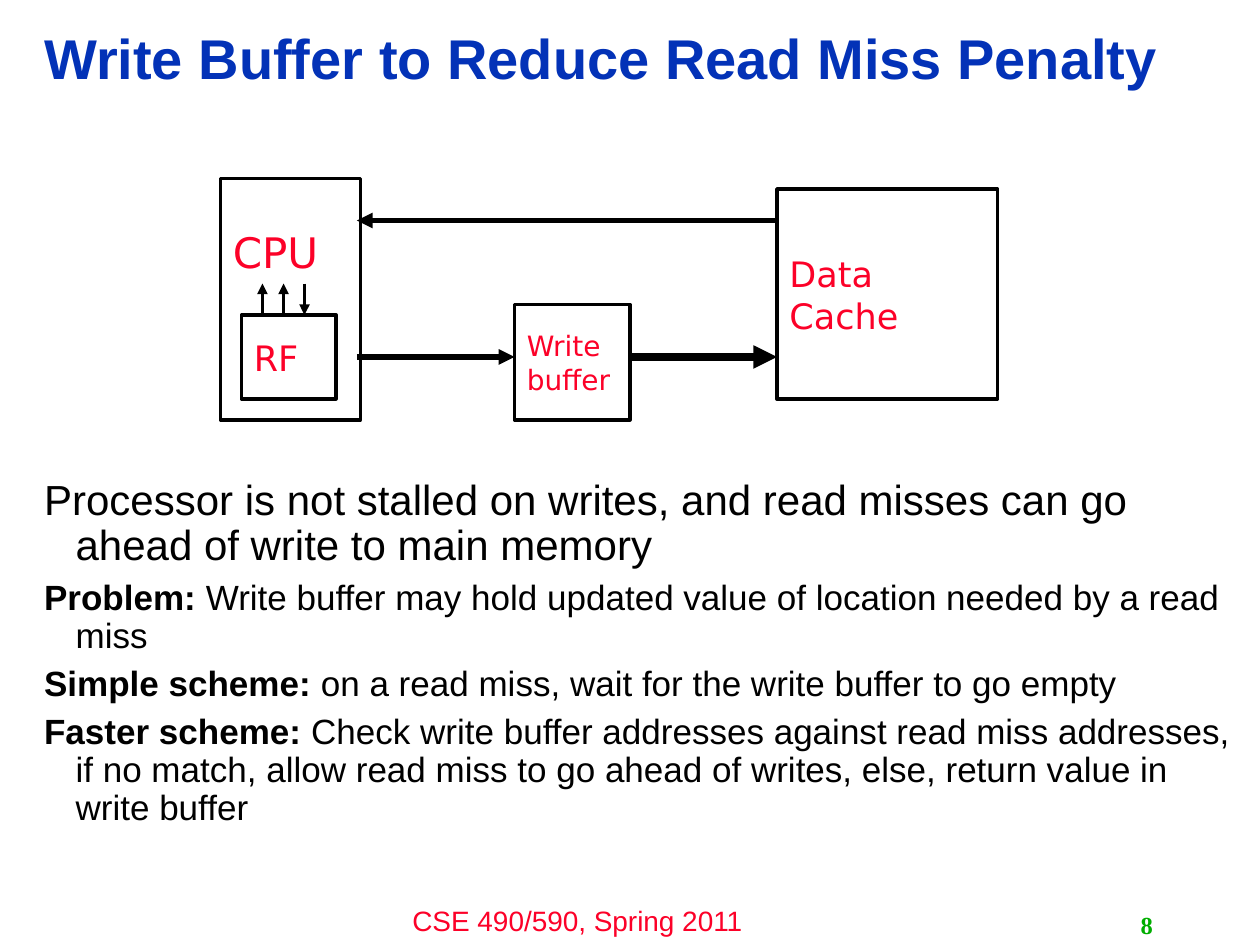
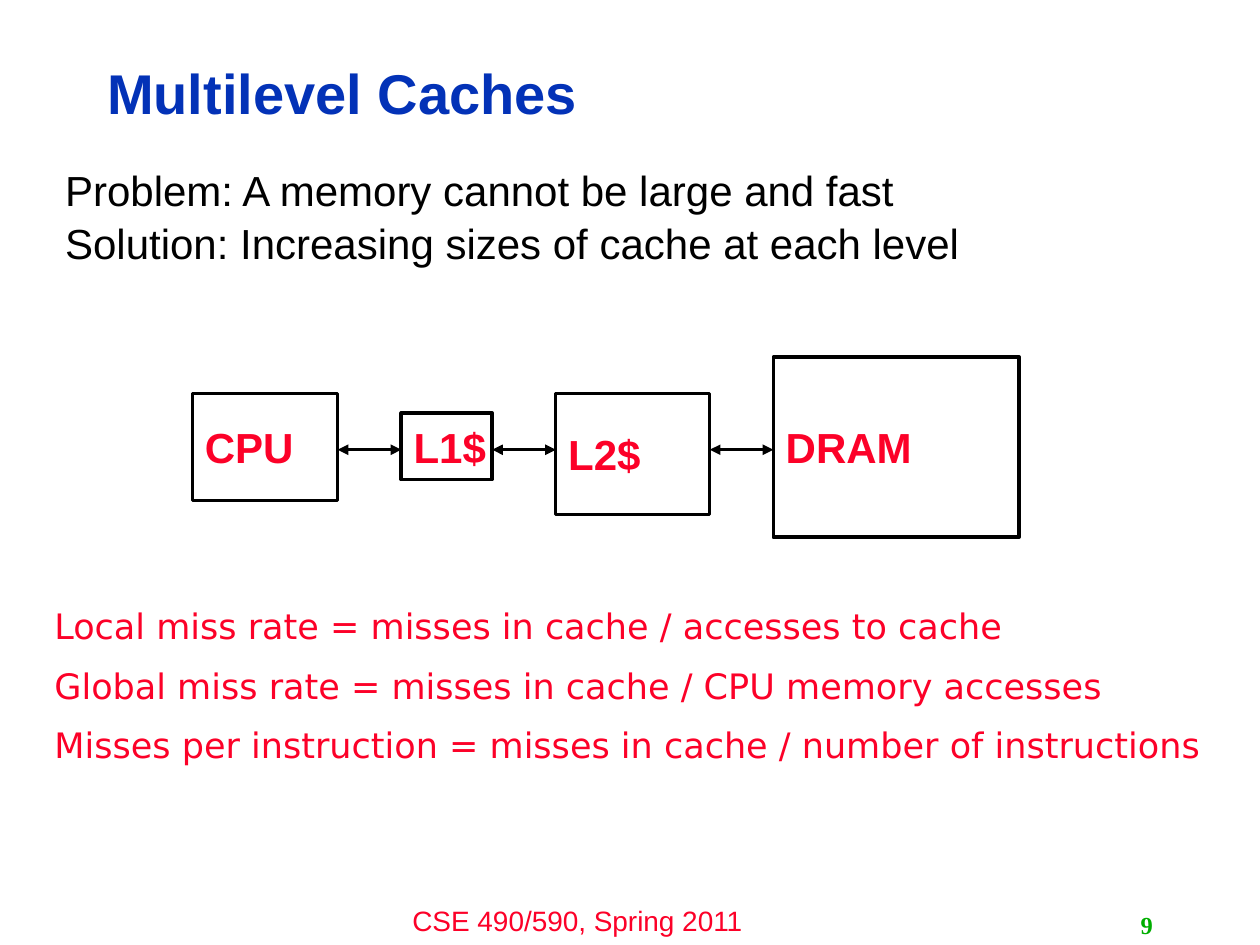
from lxml.etree import SubElement as sub
from pptx import Presentation
from pptx.dml.color import RGBColor as Rgb
from pptx.enum.shapes import MSO_CONNECTOR as Conn, MSO_SHAPE as Shape
from pptx.enum.text import MSO_ANCHOR as Anchor, MSO_AUTO_SIZE as Auto, PP_ALIGN as Align
from pptx.oxml.ns import qn
from pptx.util import Pt

HEX = {"title": "0332B7", "red": "FC0128", "green": "00AE00",
       "ink": "000000", "paper": "FFFFFF"}
SANS, WIDE, SERIF = "Arial", "DejaVu Sans", "Times New Roman"
FOOT = "CSE 490/590, Spring 2011"

BUFFER = {
    "page": 8,
    "title": "Write Buffer to Reduce Read Miss Penalty",
    "head": (18, 6, 660, 58),
    "body": (18, 270, 702, 192),
    "style": dict(first=24, size=20, lead=0.9, hang=18),
    "lines": [
        "Processor is not stalled on writes, and read misses can go ahead of write to main memory",
        ("Problem:", " Write buffer may hold updated value of location needed by a read miss"),
        ("Simple scheme: ", "on a read miss, wait for the write buffer to go empty"),
        ("Faster scheme:", " Check write buffer addresses against read miss addresses, "
         "if no match, allow read miss to go ahead of writes, else, return value in write buffer"),
    ],
}
PARTS = [
    ([], (126, 102, 80, 138), {}),
    (["Data Cache"], (444, 108, 126, 120), dict(size=20)),
    (["RF"], (138, 180, 54, 48), dict(size=20, wrap=False)),
    (["Write", "buffer"], (294, 174, 66, 66), dict(size=16)),
]
FLOWS = [
    ((204, 204), (294, 204), 3),
    ((444, 126), (204, 126), 3),
    ((360, 204), (444, 204), 4.5),
]
PORTS = [(150, True), (162, True), (174, False)]

LEVELS = {
    "page": 9,
    "title": "Multilevel Caches",
    "head": (54, 26, 575, 58),
    "body": (30, 96, 612, 72),
    "style": dict(size=24, lead=0.8, hang=22.5),
    "lines": ["Problem: A memory cannot be large and fast",
              "Solution: Increasing sizes of cache at each level"],
}
CHAIN = [("CPU", 225, 83, 61), ("L1$", 236, 52, 38),
         ("L2$", 225, 88, 69), ("DRAM", 204, 140.5, 103)]
START, GAP, AXIS = 110, 36.3, 257
RATES = ["Local miss rate = misses in cache / accesses to cache",
         "Global miss rate = misses in cache / CPU memory accesses",
         "Misses per instruction = misses in cache / number of instructions"]


def tint(name):
    return Rgb.from_string(HEX[name])


def write(shape, lines, size=24, first=None, font=SANS, color="red", bold=False,
          align=Align.LEFT, anchor=Anchor.TOP, wrap=True, lead=None, above=0, hang=0):
    frame = shape.text_frame
    frame.word_wrap = wrap
    frame.auto_size = Auto.NONE
    frame.vertical_anchor = anchor
    for i, line in enumerate(lines):
        para = frame.add_paragraph() if i else frame.paragraphs[0]
        para.alignment = align
        if lead:
            para.line_spacing = lead
        para.space_before = Pt(size * above if i else 0)
        if hang:
            props = para._p.get_or_add_pPr()
            props.set("marL", str(Pt(hang)))
            props.set("indent", str(-Pt(hang)))
            sub(props, qn("a:buNone"))
        pair = isinstance(line, tuple)
        for j, text in enumerate(line if pair else [line]):
            run = para.add_run()
            run.text = text
            run.font.name = font
            run.font.size = Pt(first if first and i == 0 else size)
            run.font.bold = bold or (pair and j == 0)
            run.font.color.rgb = tint(color)


def place(shape, area):
    shape.left, shape.top, shape.width, shape.height = map(Pt, area)


def label(slide, lines, area, **style):
    write(slide.shapes.add_textbox(*map(Pt, area)), lines, **style)


def box(slide, lines, area, **style):
    shape = slide.shapes.add_shape(Shape.RECTANGLE, *map(Pt, area))
    shape.shadow.inherit = False
    shape.fill.solid()
    shape.fill.fore_color.rgb = tint("paper")
    shape.line.color.rgb = tint("ink")
    shape.line.width = Pt(2)
    write(shape, lines, anchor=Anchor.MIDDLE, **style)


def arrow(slide, start, end, width=2, ends=("tailEnd",)):
    line = slide.shapes.add_connector(Conn.STRAIGHT, *map(Pt, start + end))
    line.line.color.rgb = tint("ink")
    line.line.width = Pt(width)
    props = line._element.spPr
    for tip in ends:
        sub(props.find(qn("a:ln")), qn("a:" + tip), type="triangle")
    sub(props, qn("a:effectLst"))


def start(deck, data):
    slide = deck.slides.add_slide(deck.slide_layouts[1])
    title, body = slide.placeholders
    place(title, data["head"])
    write(title, [data["title"]], size=32, color="title", bold=True,
          anchor=Anchor.MIDDLE, lead=0.9)
    place(body, data["body"])
    write(body, data["lines"], color="ink", above=0.3, **data["style"])
    label(slide, [FOOT], (210, 513, 240, 27), size=16, align=Align.CENTER)
    label(slide, [str(data["page"])], (516, 517, 150, 23), size=14, font=SERIF,
          color="green", bold=True, align=Align.RIGHT, anchor=Anchor.MIDDLE, wrap=False)
    return slide


def main():
    deck = Presentation()
    deck.slide_width, deck.slide_height = Pt(720), Pt(540)

    slide = start(deck, BUFFER)
    for lines, area, style in PARTS:
        box(slide, lines, area, font=WIDE, **style)
    label(slide, ["CPU"], (126, 126, 78, 36), font=WIDE)
    for x, rise in PORTS:
        low, high = (x, 180), (x, 162)
        arrow(slide, *((low, high) if rise else (high, low)))
    for flow in FLOWS:
        arrow(slide, *flow)

    slide = start(deck, LEVELS)
    x = START
    for i, (name, top, width, height) in enumerate(CHAIN):
        if i:
            arrow(slide, (x - GAP, AXIS), (x, AXIS), ends=("headEnd", "tailEnd"))
        box(slide, [name], (x, top, width, height), bold=True, wrap=False)
        x += width + GAP
    label(slide, RATES, (24, 342, 675, 103), size=20, font=WIDE, above=0.5)

    deck.save("out.pptx")


if __name__ == "__main__":
    main()
